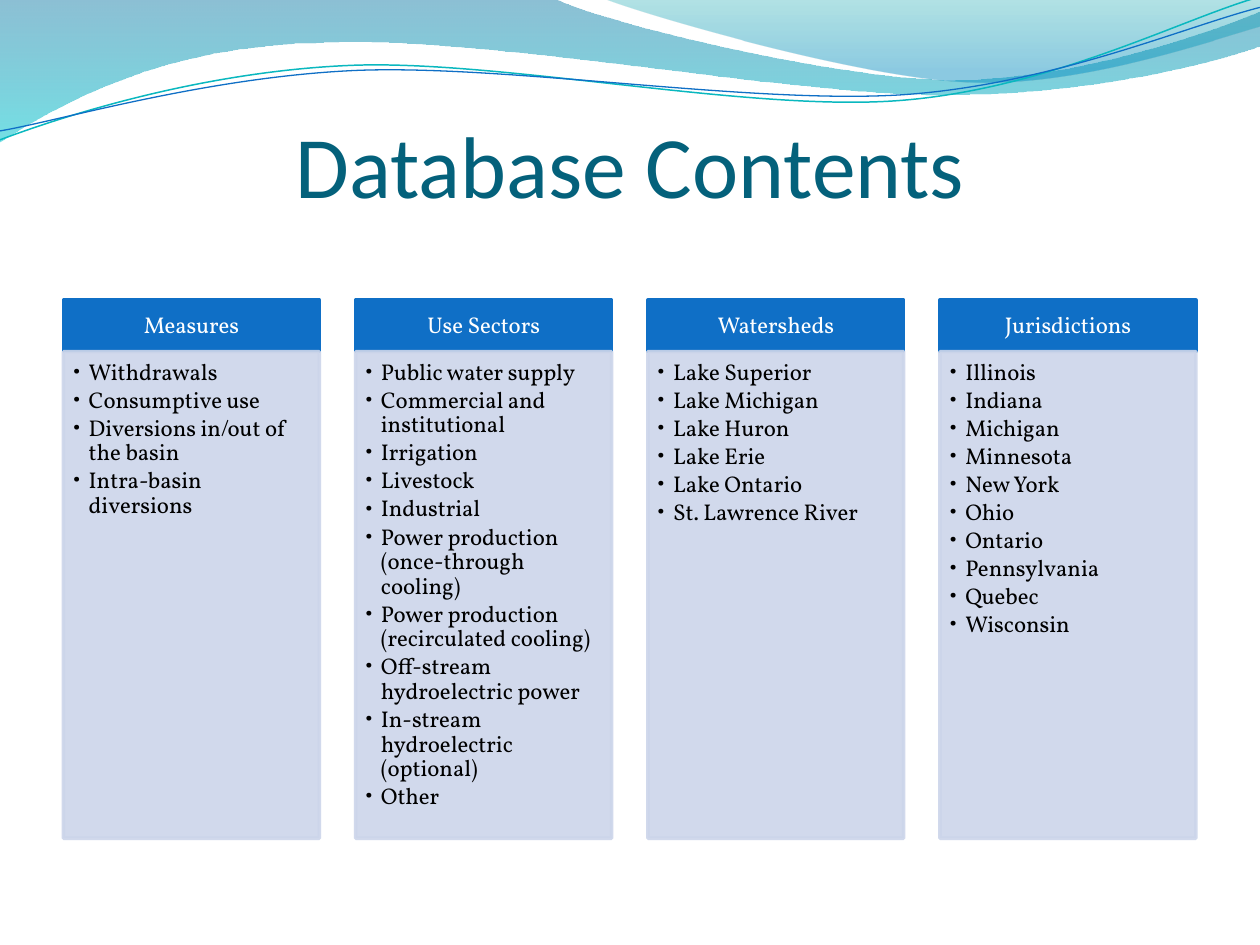
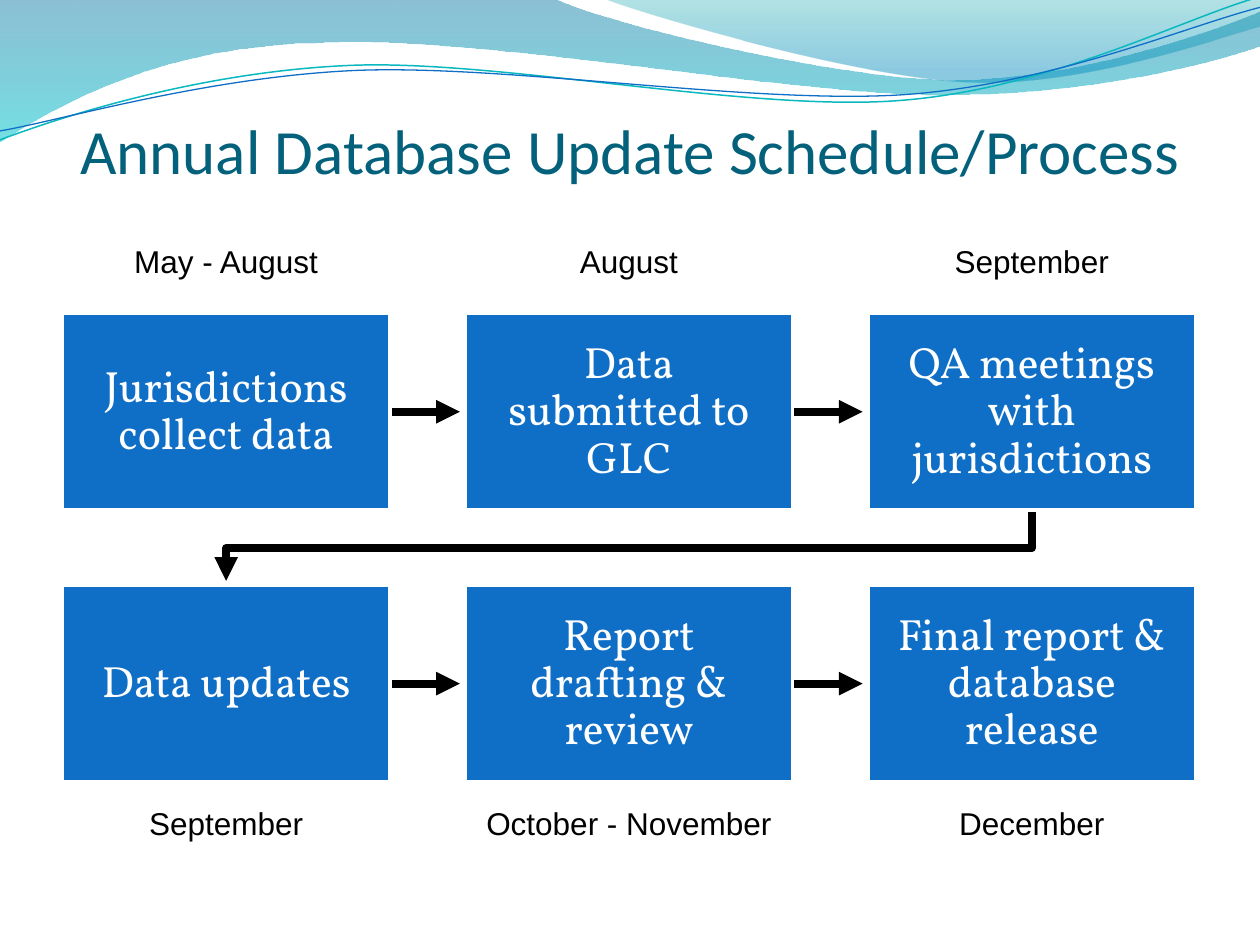
from lxml import etree
from pptx import Presentation
from pptx.dml.color import RGBColor
from pptx.enum.shapes import MSO_CONNECTOR as CONNECTOR, MSO_SHAPE as SHAPE
from pptx.enum.text import MSO_ANCHOR as ANCHOR, MSO_AUTO_SIZE as AUTO, PP_ALIGN as ALIGN
from pptx.oxml.ns import qn
from pptx.util import Cm, Pt

BLUE, TEAL, TITLE, PANEL = "0F6FC6", "0AB8BF", "04617B", "CCD5EA"
WHITE, BLACK = "FFFFFF", "000000"
HEAD_FONT, BODY_FONT, LABEL_FONT = "Calibri", "Vollkorn", "Arial"

# Wave outlines in cm: a start, then lines (2 numbers) and curves (6 numbers)
WAVES = [
    ([(0, -0.03), (11.18, -0.03), (12.09, 0.43, 16.87, 1.6, 19.25, 1.6),
      (21.67, 1.6, 24.33, 0.66, 25.4, 0.23), (25.43, 0.91),
      (24.97, 1.12, 22.1, 1.93, 18.95, 1.91), (15.8, 1.91, 9.7, 0.71, 6.53, 0.86),
      (3.28, 0.89, 1.17, 2.11, -0.03, 2.87)],
     [(0, "0074A1", 45), (100, "00C6CF", 55)]),
    ([(12.17, -0.03), (12.93, 0.28, 17.32, 1.57, 19.53, 1.65),
      (21.74, 1.75, 24.41, 0.81, 25.4, 0.53), (25.4, 0)],
     [(0, "00A1A9", 30), (80, "008BBF", 45)]),
]
WAVE_LINES = [
    ([(0, 2.82), (1.22, 2.36, 4.01, 1.45, 7.04, 1.32),
      (10.03, 1.19, 15.06, 2.26, 18.11, 2.03), (21.16, 1.8, 23.83, 0.38, 25.35, -0.05)],
     TEAL, 0.85),
    ([(0, 2.64), (1.19, 2.44, 4.17, 1.55, 7.19, 1.42),
      (10.24, 1.3, 15.16, 2.11, 18.21, 1.91), (21.23, 1.7, 23.9, 0.53, 25.4, 0.15)],
     BLUE, 0.75),
]

CONTENTS = {
    "Measures": ["Withdrawals", "Consumptive use", "Diversions in/out of the basin",
                 "Intra-basin diversions"],
    "Use Sectors": ["Public water supply", "Commercial and institutional", "Irrigation",
                    "Livestock", "Industrial", "Power production (once-through cooling)",
                    "Power production (recirculated cooling)",
                    "Off-stream hydroelectric power",
                    "In-stream hydroelectric (optional)", "Other"],
    "Watersheds": ["Lake Superior", "Lake Michigan", "Lake Huron", "Lake Erie",
                   "Lake Ontario", "St. Lawrence River"],
    "Jurisdictions": ["Illinois", "Indiana", "Michigan", "Minnesota", "New York", "Ohio",
                      "Ontario", "Pennsylvania", "Quebec", "Wisconsin"],
}
# Rows of the process: box top, label top, steps with their months
SCHEDULE = [
    (6.32, 4.75, [("Jurisdictions collect data", "May - August"),
                  ("Data submitted to GLC", "August"),
                  ("QA meetings with jurisdictions", "September")]),
    (11.8, 16.07, [("Data updates", "September"),
                   ("Report drafting & review", "October - November"),
                   ("Final report & database release", "December")]),
]


def rgb(color):
    return RGBColor.from_string(color)


def add_xml(parent, tag, **attrs):
    return etree.SubElement(parent, qn(tag), attrs)


class Deck:
    def __init__(self):
        self.prs = Presentation()
        self.prs.slide_width, self.prs.slide_height = Cm(25.4), Cm(19.05)
        self.layout = self.prs.slide_layouts[5]
        self.s = None

    def slide(self, title, size):
        first = self.s is None
        self.s = self.prs.slides.add_slide(self.layout)
        if first:
            self.waves()
        sp = self.s.shapes.title
        sp.left, sp.top, sp.width, sp.height = Cm(1.27), Cm(2.11), Cm(22.86), Cm(3.02)
        self.text(sp, [title], HEAD_FONT, size, TITLE, (0, 0.13, 0, 0), ANCHOR.TOP)

    def waves(self):
        """Draw the waves and move them to the layout, behind everything."""
        shapes = []
        for parts, stops in WAVES:
            sp = self.outline(parts, close=True)
            sp.line.fill.background()
            self.gradient(sp, stops)
            shapes.append(sp)
        for parts, color, width in WAVE_LINES:
            shapes.append(self.stroke(parts, color, width))
        tree = self.layout.shapes.element
        for i, sp in enumerate(shapes):
            tree.insert(2 + i, sp.element)

    def outline(self, parts, close=False):
        """Build a freeform, then join the three points of each curve."""
        points = [(Cm(x), Cm(y)) for part in parts for x, y in zip(part[::2], part[1::2])]
        builder = self.s.shapes.build_freeform(*points[0])
        builder.add_line_segments(points[1:], close=close)
        sp = builder.convert_to_shape()
        sp.shadow.inherit = False
        sp.fill.background()
        segments = iter(list(sp.element.iter(qn("a:lnTo"))))
        for part in parts[1:]:
            segment = next(segments)
            if len(part) == 6:
                curve = etree.Element(qn("a:cubicBezTo"))
                segment.addprevious(curve)
                for seg in (segment, next(segments), next(segments)):
                    curve.append(seg[0])
                    seg.getparent().remove(seg)
        return sp

    def stroke(self, parts, color, width):
        sp = self.outline(parts)
        sp.line.color.rgb, sp.line.width = rgb(color), Pt(width)
        return sp

    def gradient(self, sp, stops):
        sppr = sp.element.spPr
        grad = etree.Element(qn("a:gradFill"), rotWithShape="1")
        gs_list = add_xml(grad, "a:gsLst")
        for pos, color, alpha in stops:
            gs = add_xml(gs_list, "a:gs", pos=str(pos * 1000))
            clr = add_xml(gs, "a:srgbClr", val=color)
            add_xml(clr, "a:alpha", val=str(alpha * 1000))
        add_xml(grad, "a:lin", ang="5400000", scaled="0")
        sppr.replace(sppr.find(qn("a:noFill")), grad)

    def text(self, sp, lines, font, size, color, insets, anchor=ANCHOR.MIDDLE,
             align=ALIGN.CENTER, spacing=None, after=0, bullet=False):
        tf = sp.text_frame
        tf.word_wrap, tf.auto_size, tf.vertical_anchor = True, AUTO.NONE, anchor
        (tf.margin_left, tf.margin_top,
         tf.margin_right, tf.margin_bottom) = [Cm(v) for v in insets]
        for i, line in enumerate(lines):
            p = tf.add_paragraph() if i else tf.paragraphs[0]
            p.text, p.alignment = line, align
            p.line_spacing, p.space_after = spacing, Pt(after)
            if bullet:
                ppr = p._p.get_or_add_pPr()
                ppr.set("marL", str(Cm(0.32)))
                ppr.set("indent", str(-Cm(0.32)))
                add_xml(ppr, "a:buFont", typeface=font)
                add_xml(ppr, "a:buChar", char="•")
            p.font.name, p.font.size, p.font.color.rgb = font, Pt(size), rgb(color)

    def box(self, x, y, w, h, fill, line, alpha=100):
        sp = self.s.shapes.add_shape(SHAPE.RECTANGLE, Cm(x), Cm(y), Cm(w), Cm(h))
        sp.shadow.inherit = False
        sp.fill.solid()
        sp.fill.fore_color.rgb = rgb(fill)
        sp.line.color.rgb, sp.line.width = rgb(line), Pt(2)
        if alpha < 100:
            for clr in sp.element.spPr.iter(qn("a:srgbClr")):
                add_xml(clr, "a:alpha", val=str(alpha * 1000))
        return sp

    def label(self, text, x, y, w, h):
        sp = self.s.shapes.add_textbox(Cm(x), Cm(y), Cm(w), Cm(h))
        self.text(sp, [text], LABEL_FONT, 18, BLACK, (0.25, 0.13, 0.25, 0.13), ANCHOR.TOP)

    def arrow(self, *points):
        """A straight connector for two points, a bent line for more."""
        if len(points) == 2:
            ends = [Cm(v) for point in points for v in point]
            sp = self.s.shapes.add_connector(CONNECTOR.STRAIGHT, *ends)
            sp.line.color.rgb, sp.line.width = rgb(BLACK), Pt(4.5)
            add_xml(sp.element.spPr, "a:effectLst")
        else:
            sp = self.stroke(points, BLACK, 4.5)
        add_xml(sp.element.spPr.find(qn("a:ln")), "a:tailEnd", type="triangle")


def contents_slide(deck):
    deck.slide("Database Contents", 50)
    left, pitch, width = 1.28, 5.89, 5.16
    top, head_h, panel_h = 6.05, 1.04, 9.81
    for i, (heading, items) in enumerate(CONTENTS.items()):
        x = left + i * pitch
        head = deck.box(x, top, width, head_h, BLUE, BLUE)
        deck.text(head, [heading], BODY_FONT, 13, WHITE, (0.25, 0.15, 0.25, 0.15),
                  spacing=0.9)
        panel = deck.box(x, top + head_h, width, panel_h, PANEL, PANEL, alpha=90)
        deck.text(panel, items, BODY_FONT, 13, BLACK, (0.19, 0.18, 0.25, 0.28), ANCHOR.TOP,
                  ALIGN.LEFT, spacing=0.9, after=1.95, bullet=True)


def schedule_slide(deck):
    deck.slide("Annual Database Update Schedule/Process", 36)
    left, pitch, width, height = 1.26, 8.12, 6.6, 3.96
    for top, label_top, steps in SCHEDULE:
        for i, (step, month) in enumerate(steps):
            x = left + i * pitch
            if i < len(steps) - 1:
                y = top + height / 2
                deck.arrow((x + width + 0.02, y), (x + width + 1.41, y))
            sp = deck.box(x, top, width, height, BLUE, WHITE)
            deck.text(sp, [step], BODY_FONT, 25, WHITE, (0.48,) * 4, spacing=0.9)
            label_w = 8.89 if len(month) > 14 else 4.48
            deck.label(month, x + (width - label_w) / 2, label_top, label_w, 1.02)
    # Turn from the end of the first row to the start of the second
    first_x = left + width / 2
    last_x = first_x + 2 * pitch
    deck.arrow((last_x, 10.32), (last_x, 11.05), (first_x, 11.05), (first_x, 11.71))


def main():
    deck = Deck()
    contents_slide(deck)
    schedule_slide(deck)
    deck.prs.save("out.pptx")


if __name__ == "__main__":
    main()
